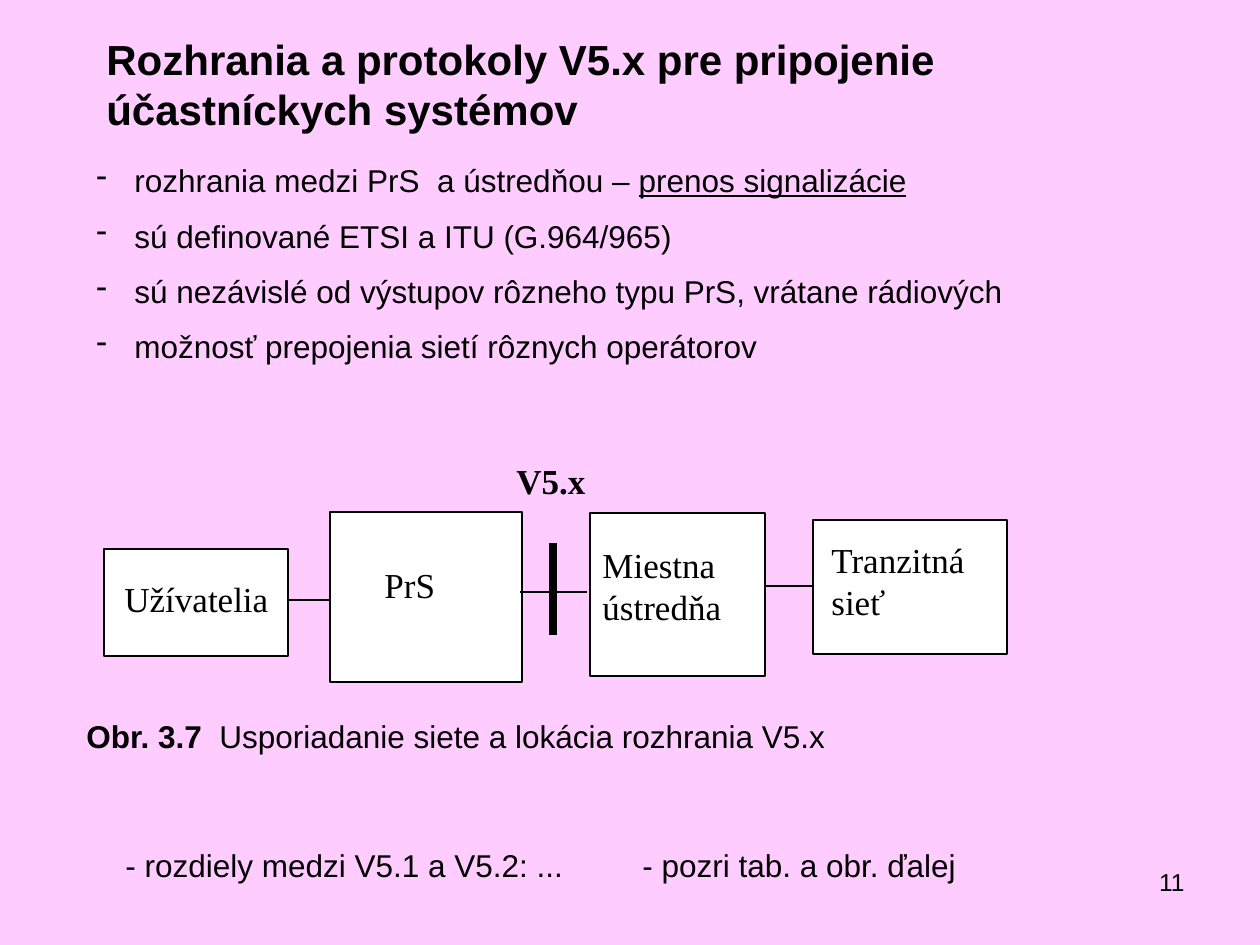
from lxml import etree
from pptx import Presentation
from pptx.dml.color import RGBColor
from pptx.enum.shapes import MSO_CONNECTOR, MSO_SHAPE
from pptx.enum.text import PP_ALIGN
from pptx.oxml.ns import qn
from pptx.util import Emu, Pt

PX = 914400 / 126
COLORS = {"background": "FFCCFF", "box": "FFFFFF", "ink": "000000"}
SERIF = "Times New Roman"

# A paragraph is a list of (text, style) runs; style is "", "bold" or "underline".
TITLE = [[("Rozhrania a protokoly V5.x pre pripojenie účastníckych systémov", "bold")]]
POINTS = [
    [("rozhrania medzi PrS  a ústredňou – ", ""), ("prenos signalizácie", "underline")],
    [("sú definované ETSI a ITU (G.964/965)", "")],
    [("sú nezávislé od výstupov rôzneho typu PrS, vrátane rádiových", "")],
    [("možnosť prepojenia sietí rôznych operátorov", "")],
]
CAPTION = [[("Obr. 3.7", "bold"), ("  Usporiadanie siete a lokácia rozhrania V5.x", "")]]
FOOTNOTE = [[("- rozdiely medzi V5.1 a V5.2: ...\t- pozri tab. a obr. ďalej", "")]]
PAGE_NUMBER = [[("11", "")]]
INTERFACE = [[("V5.x", "bold")]]

# label, box (left, top, width, height), label area (left, top, width, height)
NODES = [
    ("Užívatelia", (104, 549, 184, 107), (112, 571, 172, 71)),
    ("PrS", (330, 512, 192, 170), (372, 557, 146, 69)),
    ("Miestna ústredňa", (590, 513, 175, 163), (590, 537, 173, 116)),
    ("Tranzitná sieť", (813, 520, 194, 134), (819, 532, 171, 118)),
]
# start x, start y, end x, end y, width in points
LINES = [
    (288, 600, 329, 600, 0.75),
    (520, 592, 587, 592, 0.75),
    (765, 586, 813, 586, 0.75),
    (553, 543, 553, 635, 5),
]


def px(value):
    return Emu(round(value * PX))


def color(name):
    return RGBColor.from_string(COLORS[name])


def add_text(slide, area, paragraphs, size=18, font="Arial", align=PP_ALIGN.LEFT,
             bullet=None, hanging=38, tab=None):
    frame = slide.shapes.add_textbox(*map(px, area)).text_frame
    frame.word_wrap = True
    for index, runs in enumerate(paragraphs):
        paragraph = frame.paragraphs[0] if index == 0 else frame.add_paragraph()
        paragraph.alignment = align
        if index:
            paragraph.space_before = Pt(10)
        properties = paragraph._p.get_or_add_pPr()
        if bullet:
            properties.set("marL", str(px(hanging)))
            properties.set("indent", str(-px(hanging)))
            etree.SubElement(properties, qn("a:buChar"), char=bullet)
        if tab:
            tabs = etree.SubElement(properties, qn("a:tabLst"))
            etree.SubElement(tabs, qn("a:tab"), pos=str(px(tab)), algn="l")
        for text, style in runs:
            run = paragraph.add_run()
            run.text = text
            run.font.name = font
            run.font.size = Pt(size)
            run.font.color.rgb = color("ink")
            run.font.bold = style == "bold"
            run.font.underline = style == "underline"


def add_box(slide, area):
    box = slide.shapes.add_shape(MSO_SHAPE.RECTANGLE, *map(px, area))
    box.shadow.inherit = False
    box.fill.solid()
    box.fill.fore_color.rgb = color("box")
    box.line.color.rgb = color("ink")
    box.line.width = Pt(0.75)


def add_line(slide, ends, width):
    line = slide.shapes.add_connector(MSO_CONNECTOR.STRAIGHT, *map(px, ends))
    line.line.color.rgb = color("ink")
    line.line.width = Pt(width)
    etree.SubElement(line._element.spPr, qn("a:effectLst"))


def main():
    presentation = Presentation()
    presentation.slide_width, presentation.slide_height = px(1260), px(945)
    slide = presentation.slides.add_slide(presentation.slide_layouts[6])
    slide.background.fill.solid()
    slide.background.fill.fore_color.rgb = color("background")

    add_text(slide, (903, 861, 294, 66), PAGE_NUMBER, size=14, align=PP_ALIGN.RIGHT)
    add_text(slide, (94, 27, 1072, 113), TITLE, size=24)
    add_text(slide, (74, 711, 1072, 50), CAPTION)

    for _, box, _ in NODES:
        add_box(slide, box)
    for label, _, area in NODES:
        add_text(slide, area, [[(label, "")]], size=20, font=SERIF)
    for *ends, width in LINES:
        add_line(slide, ends, width)
    add_text(slide, (504, 453, 100, 71), INTERFACE, size=20, font=SERIF)

    add_text(slide, (84, 155, 1042, 222), POINTS, bullet="-")
    add_text(slide, (113, 840, 953, 50), FOOTNOTE, tab=517)
    presentation.save("out.pptx")


if __name__ == "__main__":
    main()
